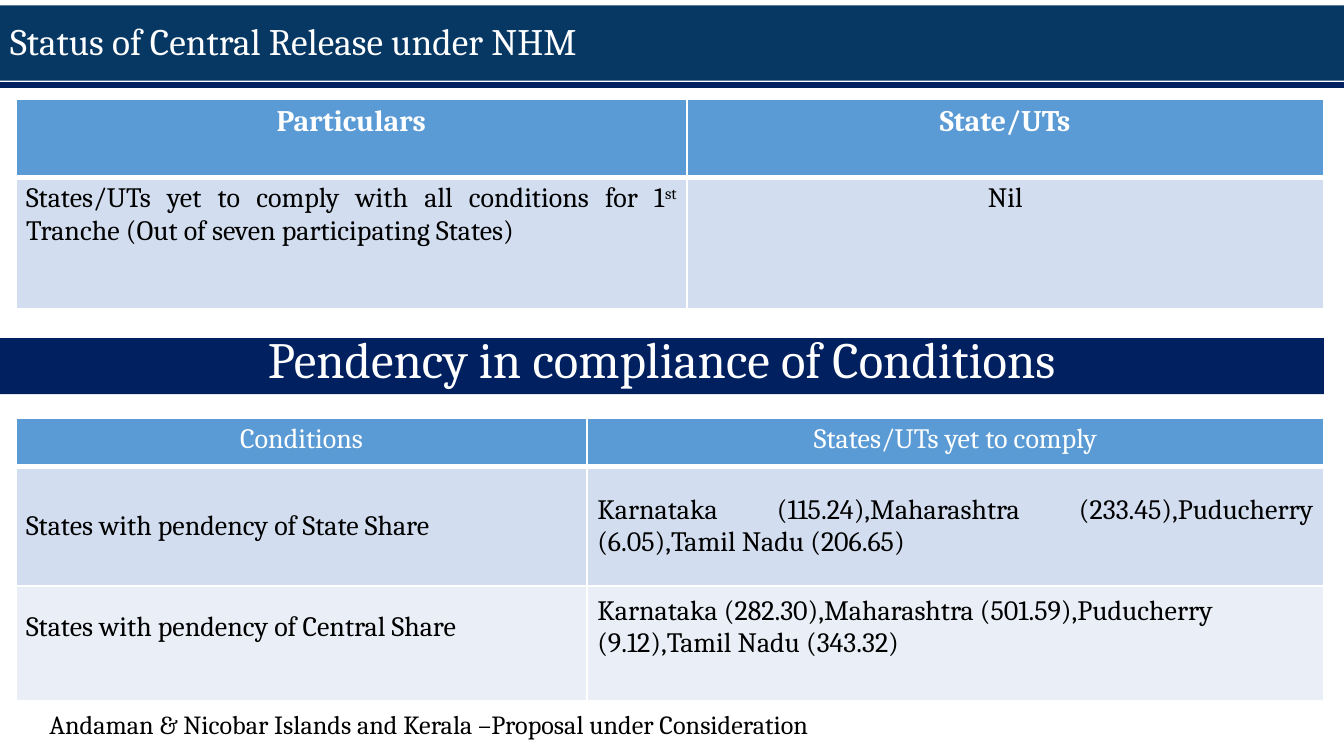
from dataclasses import dataclass

from lxml.etree import SubElement
from pptx import Presentation
from pptx.dml.color import RGBColor as RGB
from pptx.enum.shapes import MSO_CONNECTOR as LINK, MSO_SHAPE as SHAPE
from pptx.enum.text import MSO_ANCHOR as ANCHOR, MSO_AUTO_SIZE as AUTO, PP_ALIGN as ALIGN
from pptx.oxml.ns import qn
from pptx.util import Pt


@dataclass(frozen=True)
class Theme:
    font: str = "Cambria"
    white: str = "FFFFFF"
    black: str = "000000"
    gold: str = "FFC000"
    navy: str = "002060"
    deep: str = "073763"
    head: str = "5B9BD5"
    bands: tuple = ("D2DEEF", "EAEFF7")
    title: float = 20
    banner: float = 27.2
    label: float = 16
    body: float = 15
    note: float = 14


T = Theme()
PAD_X, PAD_Y = 5.4, 2.7
LEFT, CENTER, FULL = ALIGN.LEFT, ALIGN.CENTER, ALIGN.JUSTIFY
TOP, MIDDLE = ANCHOR.TOP, ANCHOR.MIDDLE


def paint(fill, color):
    fill.solid()
    fill.fore_color.rgb = RGB.from_string(color)


def pad(box):
    box.margin_left = box.margin_right = Pt(PAD_X)
    box.margin_top = box.margin_bottom = Pt(PAD_Y)


def write(frame, text, size, color, align=LEFT, bold=False, space=None):
    """Fill the first paragraph; text between ^ marks is superscript."""
    para = frame.paragraphs[0]
    para.alignment = align
    para.line_spacing = space
    font = para.font
    font.name, font.size, font.bold = T.font, Pt(size), bold
    font.color.rgb = RGB.from_string(color)
    for i, part in enumerate(text.split("^")):
        run = para.add_run()
        run.text = part
        if i % 2:
            run._r.get_or_add_rPr().set("baseline", "30000")


def add_rule(slide, y, color):
    line = slide.shapes.add_connector(LINK.STRAIGHT, 0, Pt(y), Pt(720), Pt(y))
    line.line.color.rgb = RGB.from_string(color)
    line.line.width = Pt(3)
    SubElement(line._element.spPr, qn("a:effectLst"))


def add_band(slide, top, width, height, color, text, size, align, space):
    band = slide.shapes.add_shape(SHAPE.RECTANGLE, 0, Pt(top), Pt(width), Pt(height))
    band.shadow.inherit = False
    paint(band.fill, color)
    band.line.fill.background()
    frame = band.text_frame
    frame.word_wrap = True
    frame.vertical_anchor = MIDDLE
    pad(frame)
    write(frame, text, size, T.white, align, space=space)


def edge(cell, low):
    """Draw white cell borders, with the bottom one low points wide."""
    props = cell._tc.get_or_add_tcPr()
    for i, (side, width) in enumerate(zip("LRTB", (1, 1, 1, low))):
        line = props.makeelement(qn(f"a:ln{side}"), {"w": str(Pt(width))})
        fill = SubElement(line, qn("a:solidFill"))
        SubElement(fill, qn("a:srgbClr"), val=T.white)
        props.insert(i, line)


def add_grid(slide, top, cols, rows, texts, aligns, size, bold, anchor):
    """Add a table with a header row; return it."""
    table = slide.shapes.add_table(
        len(rows), len(cols), Pt(8.6), Pt(top), Pt(sum(cols)), Pt(sum(rows))).table
    table.first_row = table.horz_banding = False
    for col, width in zip(table.columns, cols):
        col.width = Pt(width)
    for r, height in enumerate(rows):
        table.rows[r].height = Pt(height)
        head = r == 0
        for c, text in enumerate(texts[r]):
            cell = table.cell(r, c)
            pad(cell)
            cell.vertical_anchor = TOP if head else anchor
            paint(cell.fill, T.head if head else T.bands[(r - 1) % 2])
            edge(cell, 3 if head else 1)
            write(cell.text_frame, text, size if head else T.body,
                  T.white if head else T.black, aligns[r][c], head and bold)
    return table


def add_note(slide, text):
    box = slide.shapes.add_textbox(Pt(19.4), Pt(375.8), Pt(687), Pt(24.2))
    frame = box.text_frame
    frame.word_wrap = True
    frame.auto_size = AUTO.SHAPE_TO_FIT_TEXT
    write(frame, text, T.note, T.black)


def main():
    deck = Presentation()
    deck.slide_width, deck.slide_height = Pt(720), Pt(405)
    slide = deck.slides.add_slide(deck.slide_layouts[6])

    add_rule(slide, 41, T.gold)
    add_rule(slide, 45.4, T.navy)
    add_grid(slide, 53.3, (359.3, 341.3), (41.8, 70.6),
             (("Particulars", "State/UTs"),
              ("States/UTs yet to comply with all conditions for 1^st^ Tranche "
               "(Out of seven participating States)", "Nil")),
             ((CENTER, CENTER), (FULL, CENTER)), T.label, True, TOP)
    add_band(slide, 181.2, 709.2, 30, T.navy,
             "Pendency in compliance of Conditions", T.banner, CENTER, 0.7)
    table = add_grid(
        slide, 224.2, (306, 394.6), (25.6, 64.1, 61.6),
        (("Conditions", "States/UTs yet to comply"),
         ("States with pendency of State Share",
          "Karnataka (115.24),Maharashtra (233.45),Puducherry (6.05),Tamil Nadu (206.65)"),
         ("States with pendency of Central Share",
          "Karnataka (282.30),Maharashtra (501.59),Puducherry (9.12),Tamil Nadu (343.32)")),
        ((CENTER, CENTER), (FULL, FULL), (FULL, LEFT)), T.body, False, MIDDLE)
    for cell in table.rows[2].cells:
        cell.margin_bottom = Pt(20)  # lifts the last row's text above centre
    add_band(slide, 2.9, 720, 40.3, T.deep,
             "Status of Central Release under NHM", T.title, LEFT, 0.9)
    add_note(slide, "Andaman & Nicobar Islands and Kerala –Proposal under Consideration")
    deck.save("out.pptx")


if __name__ == "__main__":
    main()
